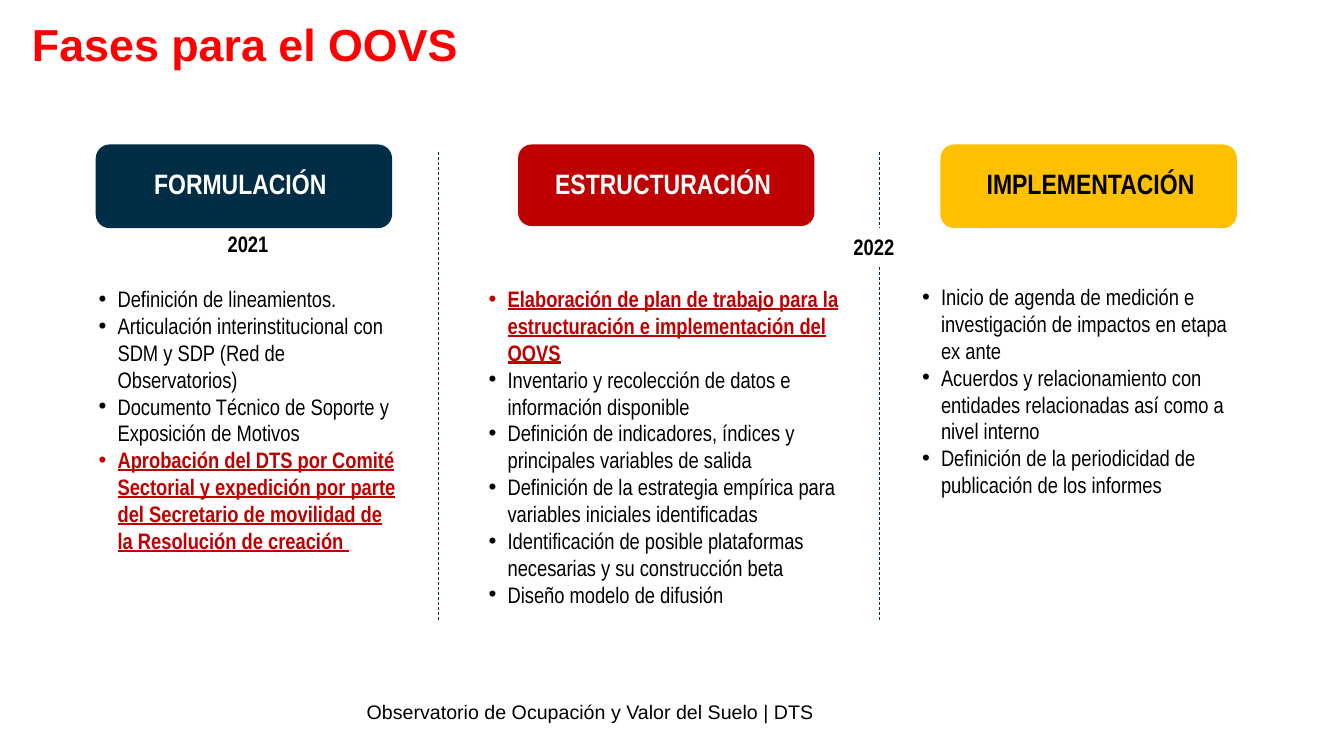
from lxml.etree import SubElement
from pptx import Presentation
from pptx.dml.color import RGBColor
from pptx.enum.dml import MSO_LINE
from pptx.enum.shapes import MSO_CONNECTOR, MSO_SHAPE
from pptx.enum.text import MSO_ANCHOR
from pptx.oxml.ns import qn
from pptx.util import Pt

COLORS = {
    "title": "FF0000", "navy": "002D46", "red": "C00000",
    "yellow": "FFC000", "black": "000000", "white": "FFFFFF",
}
NARROW = "Arial Narrow"
TITLE = "Fases para el OOVS"
FOOTER = "Observatorio de Ocupación y Valor del Suelo | DTS"

# "key" is the position of the highlighted item; "list" is left, top, width, height
PHASES = [
    {
        "name": "FORMULACIÓN", "fill": "navy", "color": "white",
        "height": 59.8, "name_left": 103, "list": (63.4, 200.2, 229, 200.9), "key": 3,
        "items": [
            "Definición de lineamientos.",
            "Articulación interinstitucional con SDM y SDP (Red de Observatorios)",
            "Documento Técnico de Soporte y Exposición de Motivos",
            "Aprobación del DTS por Comité Sectorial y expedición por parte del "
            "Secretario de movilidad de la Resolución de creación ",
        ],
    },
    {
        "name": "ESTRUCTURACIÓN", "fill": "red", "color": "white",
        "height": 58.3, "name_left": 389.5, "list": (342, 200.2, 274.3, 239.8), "key": 0,
        "items": [
            "Elaboración de plan de trabajo para la estructuración e implementación del OOVS",
            "Inventario y recolección de datos e información disponible",
            "Definición de indicadores, índices y principales variables de salida",
            "Definición de la estrategia empírica para variables iniciales identificadas",
            "Identificación de posible plataformas necesarias y su construcción beta",
            "Diseño modelo de difusión",
        ],
    },
    {
        "name": "IMPLEMENTACIÓN", "fill": "yellow", "color": "black",
        "height": 59.8, "name_left": 697.7, "list": (651.6, 198.7, 249.1, 181.4), "key": None,
        "items": [
            "Inicio de agenda de medición e investigación de impactos en etapa ex ante",
            "Acuerdos y relacionamiento con entidades relacionadas así como a nivel interno",
            "Definición de la periodicidad de publicación de los informes",
        ],
    },
]
CARD_LEFT, CARD_TOP, CARD_WIDTH, CARD_PITCH = 68.4, 103.2, 211.7, 301.7
DIVIDERS, DIVIDER_TOP, DIVIDER_BOTTOM = (313.2, 627.8), 108.7, 444.2
INDENT = 13.5

deck = Presentation()
deck.slide_width, deck.slide_height = Pt(960), Pt(540)
page = deck.slides.add_slide(deck.slide_layouts[6])


def rgb(name):
    return RGBColor.from_string(COLORS[name])


def add_bullet(para):
    properties = para._p.get_or_add_pPr()
    properties.set("marL", str(Pt(INDENT)))
    properties.set("indent", str(-Pt(INDENT)))
    SubElement(properties, qn("a:buFont"), typeface="Arial")
    SubElement(properties, qn("a:buChar"), char="•")


def write(para, text, size=16, font=NARROW, color="black", bold=False, underline=False):
    span = para.add_run()
    span.text = text
    span.font.size, span.font.name = Pt(size), font
    span.font.bold, span.font.underline = bold, underline
    span.font.color.rgb = rgb(color)


def add_text(area, text, wrap=True, **style):
    box = page.shapes.add_textbox(*map(Pt, area))
    box.text_frame.word_wrap = wrap
    write(box.text_frame.paragraphs[0], text, **style)
    return box


def add_list(area, items, key):
    frame = page.shapes.add_textbox(*map(Pt, area)).text_frame
    frame.word_wrap = True
    for index, item in enumerate(items):
        para = frame.add_paragraph() if index else frame.paragraphs[0]
        add_bullet(para)
        marked = index == key
        write(para, item, color="red" if marked else "black", bold=marked, underline=marked)


def add_card(area, fill):
    card = page.shapes.add_shape(MSO_SHAPE.ROUNDED_RECTANGLE, *map(Pt, area))
    card.shadow.inherit = False
    card.fill.solid()
    card.fill.fore_color.rgb = rgb(fill)
    card.line.fill.background()


def add_divider(x):
    line = page.shapes.add_connector(
        MSO_CONNECTOR.STRAIGHT, Pt(x), Pt(DIVIDER_TOP), Pt(x), Pt(DIVIDER_BOTTOM))
    line.line.color.rgb = rgb("navy")
    line.line.width = Pt(0.5)
    line.line.dash_style = MSO_LINE.DASH
    SubElement(line._element.spPr, qn("a:effectLst"))


title = add_text((15.8, 12.2, 321.1, 42.5), TITLE, wrap=False,
                 size=32, font="Arial", color="title", bold=True)
title.text_frame.vertical_anchor = MSO_ANCHOR.BOTTOM
title.text_frame.paragraphs[0].line_spacing = 0.9

for column, phase in enumerate(PHASES):
    add_list(phase["list"], phase["items"], phase["key"])
    add_card((CARD_LEFT + column * CARD_PITCH, CARD_TOP, CARD_WIDTH, phase["height"]),
             phase["fill"])
    add_text((phase["name_left"], 115.2, 172.8, 31.7), phase["name"],
             size=20, color=phase["color"], bold=True)

add_text((155.5, 160.6, 96.5, 26.6), "2021", bold=True)
add_text((254.9, 496.1, 450.7, 24.5), FOOTER, size=14, font="Arial")

for x in DIVIDERS:
    add_divider(x)

year = add_text((602.6, 162.7, 96.5, 26.6), "2022", bold=True)
year.fill.solid()
year.fill.fore_color.rgb = rgb("white")

deck.save("out.pptx")
